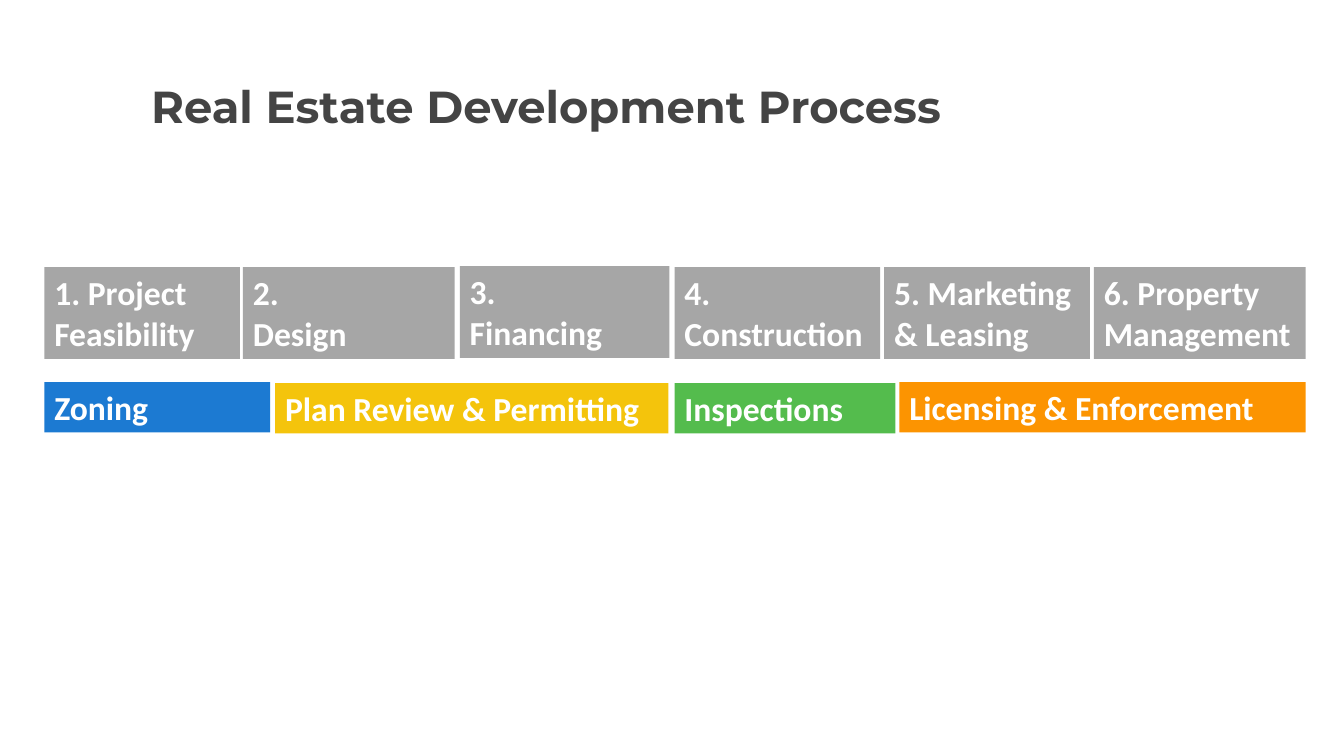
from pptx import Presentation
from pptx.dml.color import RGBColor
from pptx.enum import shapes, text
from pptx.util import Inches, Pt

COLORS = {
    "title": "444444",
    "white": "FFFFFF",
    "stage": "A6A6A6",
    "zoning": "1C7AD2",
    "permitting": "F4C40C",
    "inspections": "54BC4D",
    "licensing": "FC9401",
}

deck = Presentation()
deck.slide_width = Inches(13.33)
deck.slide_height = Inches(7.5)
page = deck.slides.add_slide(deck.slide_layouts[5])

# Title
title = page.shapes.title
title.left, title.top = Inches(1.37), Inches(0.76)
title.width, title.height = Inches(11.13), Inches(0.64)
frame = title.text_frame
frame.text = "Real Estate Development Process"
frame.word_wrap = True
frame.auto_size = text.MSO_AUTO_SIZE.NONE
frame.vertical_anchor = text.MSO_ANCHOR.MIDDLE
frame.margin_left = frame.margin_right = Inches(0.13)
frame.margin_top = frame.margin_bottom = Inches(0.07)
para = frame.paragraphs[0]
para.alignment = text.PP_ALIGN.LEFT
para.line_spacing = 0.9
para.font.name = "Montserrat"
para.font.size = Pt(32)
para.font.bold = True
para.font.color.rgb = RGBColor.from_string(COLORS["title"])

# Development stages, then the city services beneath them:
# label, left, top, width, height, color
blocks = [
    ("1. Project Feasibility", 0.44, 2.65, 1.94, 0.91, "stage"),
    ("2.\nDesign", 2.41, 2.65, 2.1, 0.91, "stage"),
    ("3.\nFinancing", 4.56, 2.64, 2.08, 0.91, "stage"),
    ("4. Construction", 6.69, 2.65, 2.04, 0.91, "stage"),
    ("5. Marketing & Leasing", 8.77, 2.65, 2.04, 0.91, "stage"),
    ("6. Property Management", 10.85, 2.65, 2.1, 0.91, "stage"),
    ("Zoning", 0.44, 3.79, 2.24, 0.5, "zoning"),
    ("Plan Review & Permitting", 2.73, 3.8, 3.9, 0.5, "permitting"),
    ("Inspections", 6.69, 3.8, 2.19, 0.5, "inspections"),
    ("Licensing & Enforcement", 8.92, 3.79, 4.03, 0.5, "licensing"),
]
for label, left, top, width, height, color in blocks:
    box = page.shapes.add_shape(
        shapes.MSO_SHAPE.RECTANGLE,
        Inches(left), Inches(top), Inches(width), Inches(height))
    box.shadow.inherit = False
    box.fill.solid()
    box.fill.fore_color.rgb = RGBColor.from_string(COLORS[color])
    box.line.fill.background()
    frame = box.text_frame
    frame.text = label
    frame.word_wrap = True
    frame.auto_size = text.MSO_AUTO_SIZE.SHAPE_TO_FIT_TEXT
    frame.vertical_anchor = text.MSO_ANCHOR.TOP
    for para in frame.paragraphs:
        para.alignment = text.PP_ALIGN.LEFT
        para.font.name = "Calibri"
        para.font.size = Pt(24)
        para.font.bold = True
        para.font.color.rgb = RGBColor.from_string(COLORS["white"])

deck.save("out.pptx")
